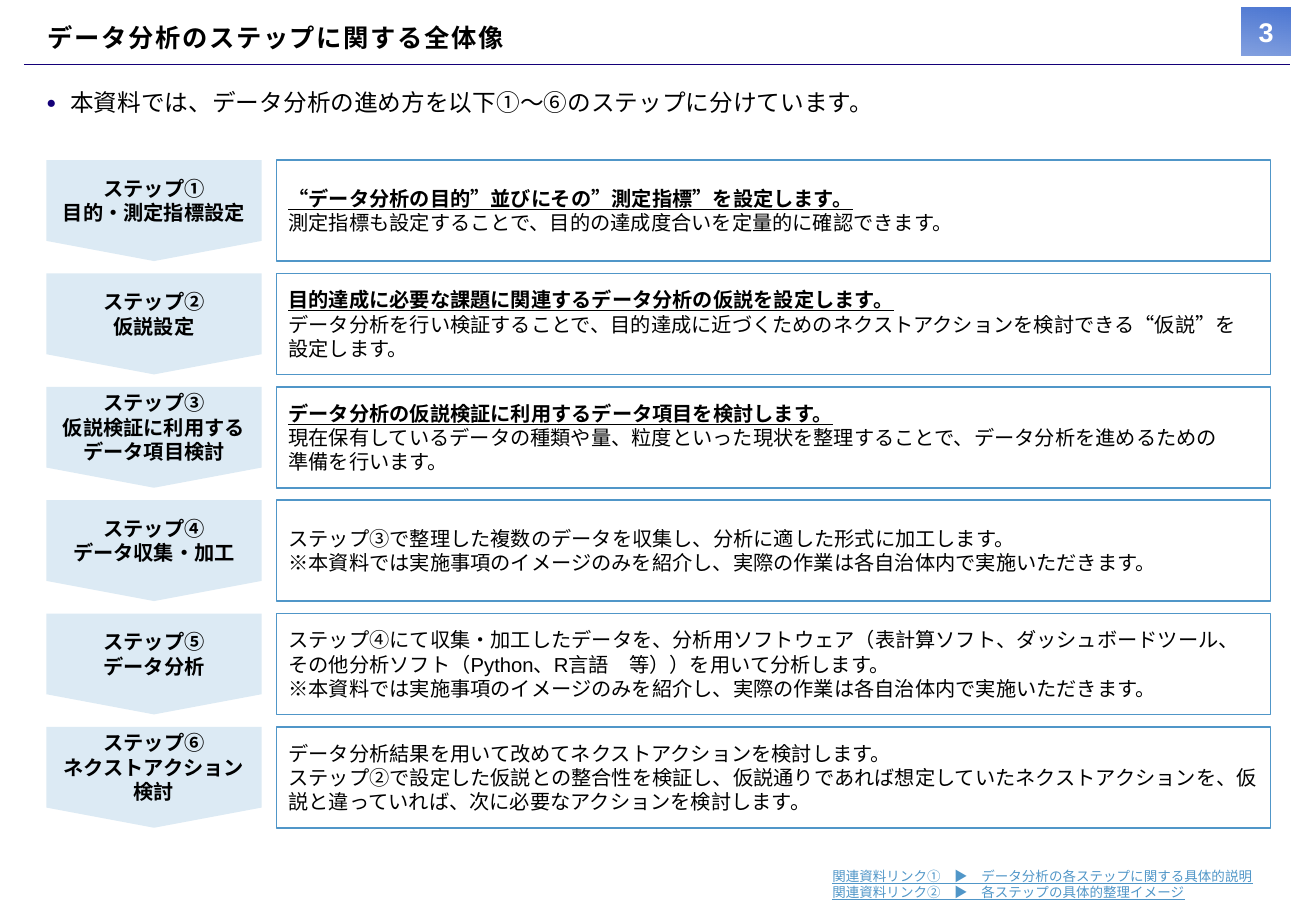
from dataclasses import dataclass

from lxml.etree import SubElement
from pptx import Presentation
from pptx.dml.color import RGBColor
from pptx.enum.shapes import MSO_CONNECTOR as Connector, MSO_SHAPE as Preset
from pptx.enum.text import MSO_ANCHOR as Anchor, MSO_AUTO_SIZE as AutoSize, PP_ALIGN as Align
from pptx.oxml.ns import qn
from pptx.shapes.autoshape import Shape
from pptx.slide import Slide
from pptx.text.text import TextFrame
from pptx.util import Cm, Pt


@dataclass(frozen=True)
class Theme:
    latin: str = "Arial"
    japanese: str = "Noto Sans CJK JP"
    text: str = "000000"
    white: str = "FFFFFF"
    navy: str = "140078"
    blue: str = "5096C8"
    pale_blue: str = "DCEAF4"
    badge: str = "4B76D2"
    title_size: int = 15
    lead_size: int = 14
    step_size: int = 12
    link_size: int = 8
    number_size: int = 16


@dataclass(frozen=True)
class Area:
    left: float
    top: float
    width: float
    height: float

    def lengths(self) -> tuple[Cm, Cm, Cm, Cm]:
        return Cm(self.left), Cm(self.top), Cm(self.width), Cm(self.height)


@dataclass(frozen=True)
class Step:
    label: str
    description: str
    has_headline: bool = False


THEME = Theme()
FIRST_TOP, PITCH, STEP_HEIGHT = 3.35, 2.37, 2.11
LABEL_LEFT, LABEL_WIDTH = 0.97, 4.5
DESCRIPTION_LEFT, DESCRIPTION_WIDTH = 5.78, 20.78

STEPS = [
    Step("ステップ①\n目的・測定指標設定",
         "“データ分析の目的”並びにその”測定指標”を設定します。\n"
         "測定指標も設定することで、目的の達成度合いを定量的に確認できます。", True),
    Step("ステップ②\n仮説設定",
         "目的達成に必要な課題に関連するデータ分析の仮説を設定します。\n"
         "データ分析を行い検証することで、目的達成に近づくためのネクストアクションを検討できる“仮説”を\v"
         "設定します。", True),
    Step("ステップ③\n仮説検証に利用する\nデータ項目検討",
         "データ分析の仮説検証に利用するデータ項目を検討します。\n"
         "現在保有しているデータの種類や量、粒度といった現状を整理することで、データ分析を進めるための\v"
         "準備を行います。", True),
    Step("ステップ④\nデータ収集・加工",
         "ステップ③で整理した複数のデータを収集し、分析に適した形式に加工します。\n"
         "※本資料では実施事項のイメージのみを紹介し、実際の作業は各自治体内で実施いただきます。"),
    Step("ステップ⑤\nデータ分析",
         "ステップ④にて収集・加工したデータを、分析用ソフトウェア（表計算ソフト、ダッシュボードツール、"
         "その他分析ソフト（Python、R言語　等））を用いて分析します。\n"
         "※本資料では実施事項のイメージのみを紹介し、実際の作業は各自治体内で実施いただきます。"),
    Step("ステップ⑥\nネクストアクション\n検討",
         "データ分析結果を用いて改めてネクストアクションを検討します。\n"
         "ステップ②で設定した仮説との整合性を検証し、仮説通りであれば想定していたネクストアクションを、"
         "仮説と違っていれば、次に必要なアクションを検討します。"),
]


def rgb(value: str) -> RGBColor:
    return RGBColor.from_string(value)


def write(frame: TextFrame, text: str, size: int, color: str = THEME.text, bold: bool = False,
          underline: bool = False, align: Align = Align.LEFT, latin: str = THEME.latin) -> None:
    frame.text = text
    for paragraph in frame.paragraphs:
        paragraph.alignment = align
        for run in paragraph.runs:
            font = run.font
            font.name, font.size = latin, Pt(size)
            font.bold, font.underline = bold, underline
            font.color.rgb = rgb(color)
            SubElement(font._element, qn("a:ea"), typeface=THEME.japanese)


def set_frame(frame: TextFrame, anchor: Anchor, wrap: bool = True, inset: bool = True) -> None:
    frame.auto_size = AutoSize.NONE
    frame.vertical_anchor, frame.word_wrap = anchor, wrap
    if not inset:
        frame.margin_left = frame.margin_top = frame.margin_right = frame.margin_bottom = 0


def place(shape: Shape, area: Area) -> None:
    shape.left, shape.top, shape.width, shape.height = area.lengths()


def add_preset(slide: Slide, preset: Preset, area: Area, fill: str, line: str | None = None) -> Shape:
    shape = slide.shapes.add_shape(preset, *area.lengths())
    shape.shadow.inherit = False
    shape.fill.solid()
    shape.fill.fore_color.rgb = rgb(fill)
    if line:
        shape.line.color.rgb = rgb(line)
        shape.line.width = Pt(1)
    else:
        shape.line.fill.background()
    set_frame(shape.text_frame, Anchor.MIDDLE)
    return shape


def add_page_badge(slide: Slide) -> None:
    badge = add_preset(slide, Preset.RECTANGLE, Area(25.96, 0.15, 1.02, 1.02), THEME.badge)
    badge.fill.gradient()
    badge.fill.gradient_angle = 260
    for stop in badge.fill.gradient_stops:
        stop.color.rgb = rgb(THEME.badge)
    last_color = badge._element.spPr.findall(".//" + qn("a:srgbClr"))[-1]
    SubElement(last_color, qn("a:alpha"), val="68000")
    set_frame(badge.text_frame, Anchor.MIDDLE, wrap=False, inset=False)
    write(badge.text_frame, "3", THEME.number_size, THEME.white, bold=True, align=Align.CENTER)


def add_header_rule(slide: Slide) -> None:
    rule = slide.shapes.add_connector(Connector.STRAIGHT, Cm(0.5), Cm(1.35), Cm(26.97), Cm(1.35))
    rule.line.color.rgb = rgb(THEME.navy)
    rule.line.width = Pt(0.5)
    SubElement(rule._element.spPr, qn("a:effectLst"))


def fill_title(title: Shape) -> None:
    place(title, Area(0.99, 0.46, 9.68, 0.64))
    set_frame(title.text_frame, Anchor.TOP, wrap=False, inset=False)
    write(title.text_frame, "データ分析のステップに関する全体像", THEME.title_size,
          bold=True, latin=THEME.japanese)
    title.text_frame.paragraphs[0].runs[0].font._element.set("spc", "100")


def fill_lead(body: Shape) -> None:
    place(body, Area(0.97, 1.73, 25.58, 0.66))
    set_frame(body.text_frame, Anchor.TOP, inset=False)
    write(body.text_frame, "本資料では、データ分析の進め方を以下①～⑥のステップに分けています。", THEME.lead_size)
    paragraph = body.text_frame.paragraphs[0]
    paragraph.line_spacing = 1.2
    paragraph.space_before, paragraph.space_after = Pt(0), Pt(3)
    properties = paragraph._p.get_or_add_pPr()
    properties.set("marL", str(Cm(0.5)))
    properties.set("indent", str(-Cm(0.5)))
    SubElement(SubElement(properties, qn("a:buClr")), qn("a:srgbClr"), val=THEME.navy)
    SubElement(properties, qn("a:buSzPct"), val="70000")
    SubElement(properties, qn("a:buFont"), typeface=THEME.latin)
    SubElement(properties, qn("a:buChar"), char="●")


def add_step(slide: Slide, step: Step, top: float) -> None:
    box = add_preset(slide, Preset.RECTANGLE,
                     Area(DESCRIPTION_LEFT, top, DESCRIPTION_WIDTH, STEP_HEIGHT), THEME.white, THEME.blue)
    write(box.text_frame, step.description, THEME.step_size)
    if step.has_headline:
        for run in box.text_frame.paragraphs[0].runs:
            run.font.bold = run.font.underline = True
    label = add_preset(slide, Preset.FLOWCHART_OFFPAGE_CONNECTOR,
                       Area(LABEL_LEFT, top, LABEL_WIDTH, STEP_HEIGHT), THEME.pale_blue)
    write(label.text_frame, step.label, THEME.step_size, bold=True, align=Align.CENTER)


def add_related_links(slide: Slide) -> None:
    links = slide.shapes.add_textbox(*Area(17.15, 18.03, 9.4, 0.94).lengths())
    set_frame(links.text_frame, Anchor.TOP)
    write(links.text_frame,
          "関連資料リンク①　▶　データ分析の各ステップに関する具体的説明\n"
          "関連資料リンク②　▶　各ステップの具体的整理イメージ",
          THEME.link_size, THEME.blue, underline=True)


def main() -> None:
    presentation = Presentation()
    presentation.slide_width, presentation.slide_height = Cm(27.51), Cm(19.05)
    slide = presentation.slides.add_slide(presentation.slide_layouts[1])
    add_page_badge(slide)
    add_header_rule(slide)
    fill_title(slide.shapes.title)
    fill_lead(slide.placeholders[1])
    for index, step in enumerate(STEPS):
        add_step(slide, step, FIRST_TOP + index * PITCH)
    add_related_links(slide)
    presentation.save("out.pptx")


if __name__ == "__main__":
    main()
